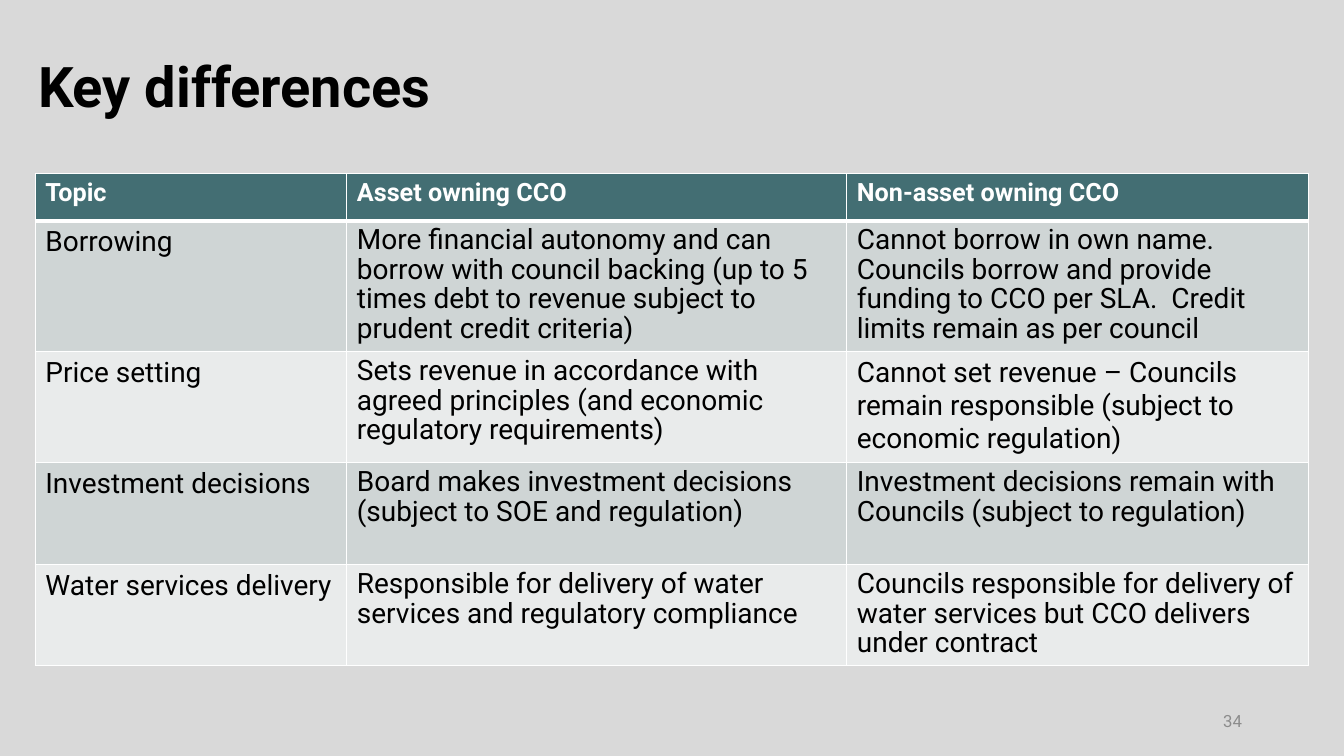
import lxml.etree
import pptx
import pptx.dml.color
import pptx.enum.text
import pptx.oxml.ns
import pptx.util
from pptx.util import Cm

THEME = {
    "font": "Roboto",
    "background": "D9D9D9",
    "header": "436E73",
    "bands": ("CFD5D5", "E9EBEB"),
    "border": "FFFFFF",
    "title": {"size": 40, "bold": True, "color": "000000"},
    "heading": {"size": 18, "bold": True, "color": "FFFFFF"},
    "body": {"size": 20, "bold": False, "color": "000000"},
    "number": {"size": 12, "bold": False, "color": "8C8C8C"},
}
TIGHT = {"line_spacing": 0.9, "space_before": pptx.util.Pt(10)}


def write(frame, text, style, layout):
    para = frame.paragraphs[0]
    for name, value in layout.items():
        setattr(para, name, value)
    span = para.add_run()
    span.text = text
    formats = {
        "name": THEME["font"],
        "size": pptx.util.Pt(THEME[style]["size"]),
        "bold": THEME[style]["bold"],
    }
    for name, value in formats.items():
        setattr(span.font, name, value)
    span.font.color.rgb = pptx.dml.color.RGBColor.from_string(THEME[style]["color"])


def add_borders(cell, widths):
    properties = cell._tc.get_or_add_tcPr()
    for position, (side, width) in enumerate(widths.items()):
        line = lxml.etree.Element(pptx.oxml.ns.qn(f"a:ln{side}"), w=str(pptx.util.Pt(width)))
        fill = lxml.etree.SubElement(line, pptx.oxml.ns.qn("a:solidFill"))
        lxml.etree.SubElement(fill, pptx.oxml.ns.qn("a:srgbClr"), val=THEME["border"])
        properties.insert(position, line)


# Page
deck = pptx.Presentation()
deck.slide_width, deck.slide_height = Cm(33.87), Cm(19.05)
page = deck.slides.add_slide(deck.slide_layouts[6])
page.background.fill.solid()
page.background.fill.fore_color.rgb = pptx.dml.color.RGBColor.from_string(THEME["background"])

# Title and page number
labels = [
    ("Key differences", "title", (0.71, 0.41, 29.21, 3.68), {"line_spacing": 0.9}),
    ("34", "number", (23.93, 17.65, 7.62, 1.02),
     {"alignment": pptx.enum.text.PP_ALIGN.RIGHT}),
]
for text, style, place, layout in labels:
    box = page.shapes.add_textbox(*(Cm(length) for length in place))
    box.text_frame.word_wrap = True
    box.text_frame.vertical_anchor = pptx.enum.text.MSO_ANCHOR.MIDDLE
    write(box.text_frame, text, style, layout)

# Comparison table
rows = [
    ("Topic", "Asset owning CCO", "Non-asset owning CCO"),
    ("Borrowing",
     "More financial autonomy and can borrow with council backing "
     "(up to 5 times debt to revenue subject to prudent credit criteria)",
     "Cannot borrow in own name.  Councils borrow and provide funding to CCO per SLA.  "
     "Credit limits remain as per council"),
    ("Price setting",
     "Sets revenue in accordance with agreed principles "
     "(and economic regulatory requirements)",
     "Cannot set revenue – Councils remain responsible (subject to economic regulation)"),
    ("Investment decisions",
     "Board makes investment decisions (subject to SOE and regulation)",
     "Investment decisions remain with Councils (subject to regulation)"),
    ("Water services delivery",
     "Responsible for delivery of water services and regulatory compliance",
     "Councils responsible for delivery of water services but CCO delivers under contract"),
]
column_widths = (7.85, 12.6, 11.63)
row_heights = (1.19, 3.24, 2.75, 2.57, 2.52)
loose_cell = (2, 2)

table = page.shapes.add_table(
    len(rows), len(column_widths), Cm(0.89), Cm(4.37),
    Cm(sum(column_widths)), Cm(sum(row_heights))).table
for column, width in zip(table.columns, column_widths):
    column.width = Cm(width)
for row, height in zip(table.rows, row_heights):
    row.height = Cm(height)

for row_index, texts in enumerate(rows):
    is_header = row_index == 0
    color = THEME["header"] if is_header else THEME["bands"][(row_index - 1) % 2]
    for column_index, text in enumerate(texts):
        cell = table.cell(row_index, column_index)
        cell.fill.solid()
        cell.fill.fore_color.rgb = pptx.dml.color.RGBColor.from_string(color)
        is_tight = (not is_header and column_index > 0
                    and (row_index, column_index) != loose_cell)
        write(cell.text_frame, text, "heading" if is_header else "body",
              TIGHT if is_tight else {})
        add_borders(cell, {"L": 1, "R": 1, "T": 3 if row_index == 1 else 1,
                           "B": 3 if is_header else 1})

deck.save("out.pptx")
